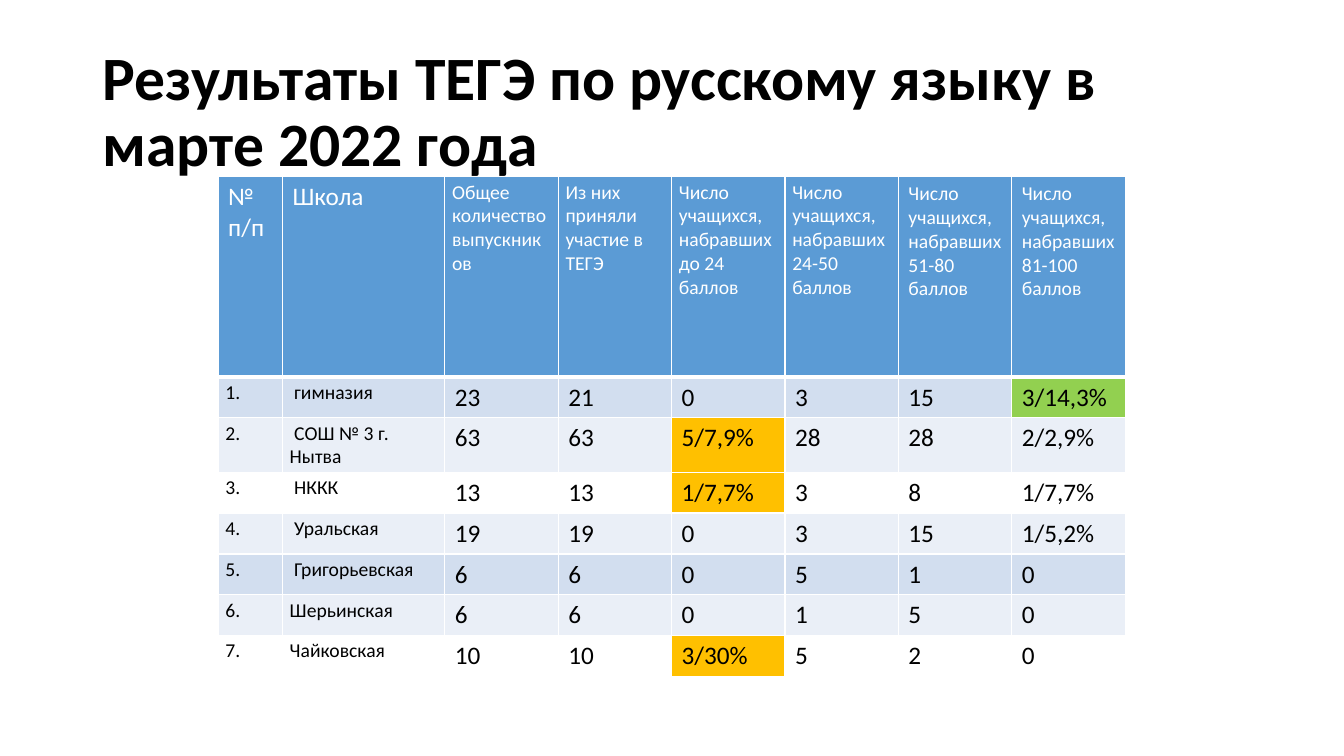
from lxml import etree
from pptx import Presentation
from pptx.dml.color import RGBColor
from pptx.enum.text import MSO_ANCHOR
from pptx.oxml.ns import qn
from pptx.util import Pt

MIDDLE = MSO_ANCHOR.MIDDLE

BLACK = RGBColor(0x00, 0x00, 0x00)
WHITE = RGBColor(0xFF, 0xFF, 0xFF)
HEADER_BLUE = RGBColor(0x5B, 0x9B, 0xD5)
BAND_DARK = RGBColor(0xD2, 0xDE, 0xEF)
BAND_LIGHT = RGBColor(0xEA, 0xEF, 0xF7)
TOP_SCORE_GREEN = RGBColor(0x92, 0xD0, 0x50)
LOW_SCORE_ORANGE = RGBColor(0xFF, 0xC0, 0x00)

WIDE_INSETS = (7.2, 3.6)
NARROW_INSETS = (5.2, 2.6)

COLUMN_WIDTHS = [46, 116] + [81] * 6
HEADER_HEIGHT = 143
SCHOOL_HEIGHT = 29.2

HEADINGS = [
    "№ п/п",
    "Школа",
    "Общее количество выпускников",
    "Из них приняли участие в ТЕГЭ",
] + [f"Число учащихся, набравших {scores} баллов"
     for scores in ("до 24", "24-50", "51-80", "81-100")]

SCHOOLS = [
    (" гимназия", "23", "21", "0", "3", "15", "3/14,3%"),
    (" СОШ № 3 г. Нытва", "63", "63", "5/7,9%", "28", "28", "2/2,9%"),
    (" НККК", "13", "13", "1/7,7%", "3", "8", "1/7,7%"),
    (" Уральская", "19", "19", "0", "3", "15", "1/5,2%"),
    (" Григорьевская", "6", "6", "0", "5", "1", "0"),
    ("Шерьинская", "6", "6", "0", "1", "5", "0"),
    ("Чайковская", "10", "10", "3/30%", "5", "2", "0"),
]
ROW_FILLS = [BAND_DARK, BAND_LIGHT, None, BAND_LIGHT,
             BAND_DARK, BAND_LIGHT, None]
LOW_SCORE_COLUMN = 4
HIGHLIGHTS = {(1, 7): TOP_SCORE_GREEN}
HIGHLIGHTS.update({(number, LOW_SCORE_COLUMN): LOW_SCORE_ORANGE
                   for number in (2, 3, 7)})


class SlideBuilder:
    font_name = "Calibri"

    def __init__(self, slide):
        self.slide = slide

    def style_text(self, paragraph, size, color, bold=False):
        for run in paragraph.runs:
            run.font.name = self.font_name
            run.font.size = Pt(size)
            run.font.bold = bold
            run.font.color.rgb = color

    def title(self, text, left, top, width, height):
        frame = self.slide.shapes.add_textbox(
            Pt(left), Pt(top), Pt(width), Pt(height)).text_frame
        frame.word_wrap = True
        frame.vertical_anchor = MIDDLE
        frame.text = text
        paragraph = frame.paragraphs[0]
        paragraph.line_spacing = 0.9
        self.style_text(paragraph, 44, BLACK, bold=True)

    def table(self, left, top, column_widths, row_heights):
        table = self.slide.shapes.add_table(
            len(row_heights), len(column_widths), Pt(left), Pt(top),
            Pt(sum(column_widths)), Pt(sum(row_heights))).table
        table.horz_banding = False
        for column, width in zip(table.columns, column_widths):
            column.width = Pt(width)
        for row, height in zip(table.rows, row_heights):
            row.height = Pt(height)
        return table

    def cell(self, cell, text, size, color, fill, insets, borders):
        cell.text = text
        self.style_text(cell.text_frame.paragraphs[0], size, color)
        cell.margin_left = cell.margin_right = Pt(insets[0])
        cell.margin_top = cell.margin_bottom = Pt(insets[1])
        self.cell_borders(cell, borders)
        if fill is None:
            cell.fill.background()
        else:
            cell.fill.solid()
            cell.fill.fore_color.rgb = fill

    def cell_borders(self, cell, borders):
        """Draw white borders; borders maps a side (L, R, T, B) to its width."""
        properties = cell._tc.get_or_add_tcPr()
        for side, width in borders.items():
            line = etree.SubElement(properties, qn(f"a:ln{side}"), w=str(Pt(width)))
            paint = etree.SubElement(line, qn("a:solidFill"))
            etree.SubElement(paint, qn("a:srgbClr"), val=str(WHITE))


def add_results(builder):
    heights = [HEADER_HEIGHT] + [SCHOOL_HEIGHT] * len(SCHOOLS)
    results = builder.table(155.8, 126.3, COLUMN_WIDTHS, heights)

    for column, heading in enumerate(HEADINGS):
        size = 18 if column < 2 else 14
        insets = NARROW_INSETS if 2 <= column <= 5 else WIDE_INSETS
        builder.cell(results.cell(0, column), heading, size, WHITE, HEADER_BLUE,
                     insets, {"L": 1, "R": 1, "T": 1, "B": 3})

    for number, (school, row_fill) in enumerate(zip(SCHOOLS, ROW_FILLS), start=1):
        for column, value in enumerate((f"{number}.", *school)):
            size, insets = (14, NARROW_INSETS) if column < 2 else (18, WIDE_INSETS)
            fill = HIGHLIGHTS.get((number, column), row_fill)
            builder.cell(results.cell(number, column), value, size, BLACK, fill,
                         insets, {"L": 1, "R": 1, "B": 1})


def main():
    presentation = Presentation()
    presentation.slide_width = Pt(960)
    presentation.slide_height = Pt(540)
    blank_layout = presentation.slide_layouts[6]
    builder = SlideBuilder(presentation.slides.add_slide(blank_layout))
    builder.title("Результаты ТЕГЭ по русскому языку в марте 2022 года",
                  66, 28.75, 828, 104.4)
    add_results(builder)
    presentation.save("out.pptx")


if __name__ == "__main__":
    main()
